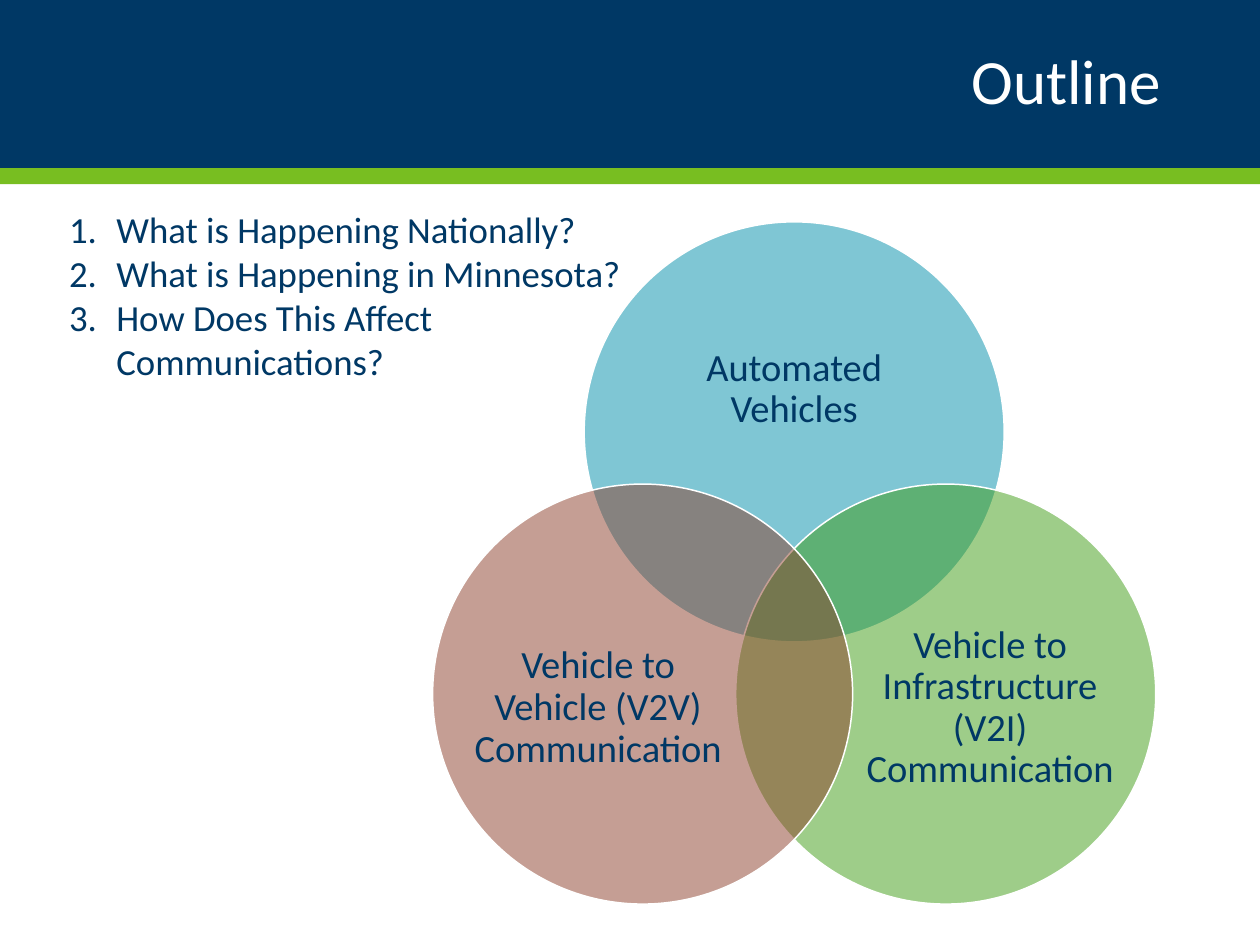
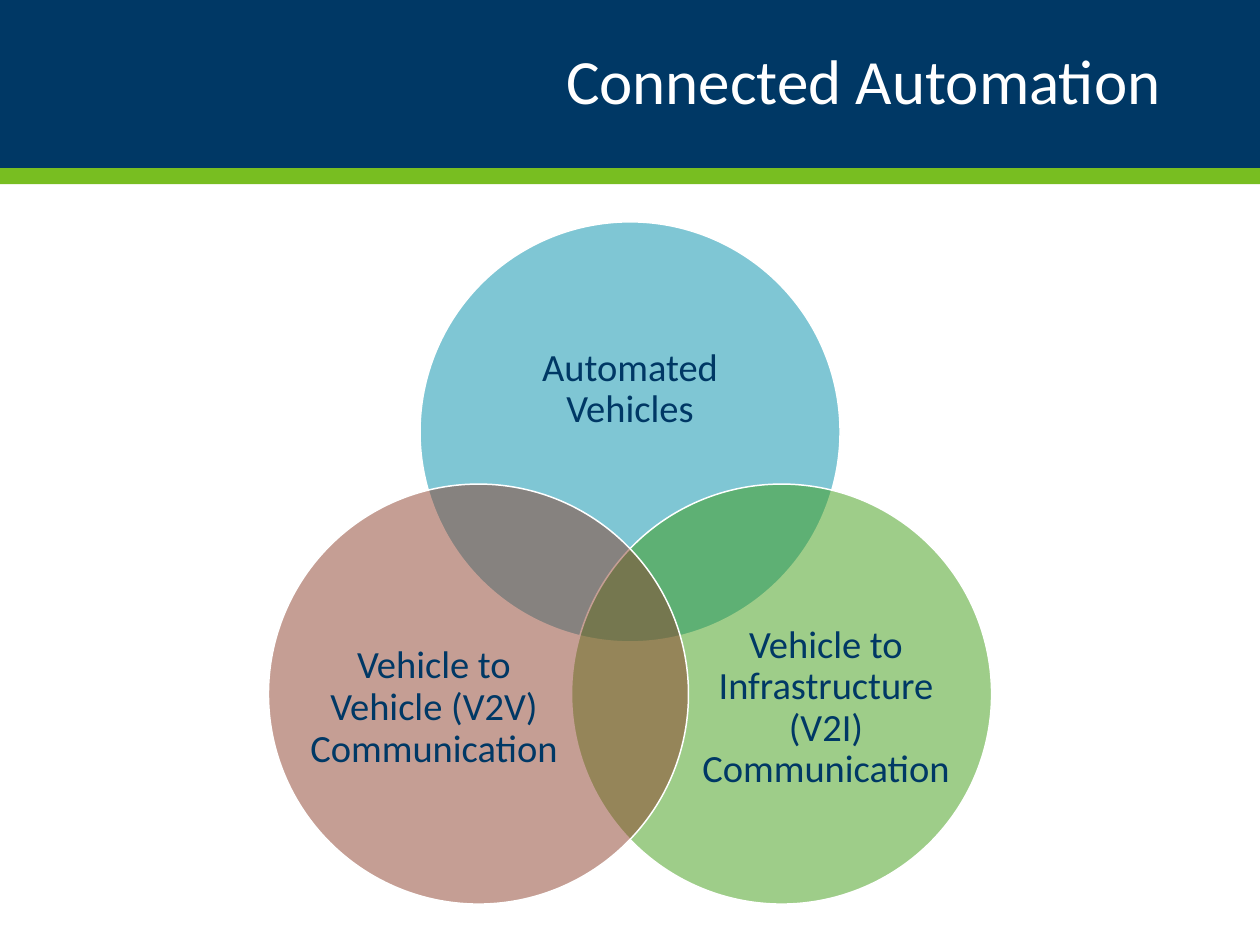
from pptx import Presentation
from pptx.dml.color import RGBColor
from pptx.enum.shapes import MSO_SHAPE
from pptx.enum.text import MSO_ANCHOR, MSO_AUTO_SIZE, PP_ALIGN
from pptx.oxml.ns import qn
from pptx.util import Pt
from lxml.etree import SubElement

NAVY = RGBColor(0x00, 0x38, 0x65)
LIME = RGBColor(0x78, 0xBE, 0x21)
WHITE = RGBColor(0xFF, 0xFF, 0xFF)
TEAL = RGBColor(0x00, 0x8E, 0xAA)
GREEN = RGBColor(0x3F, 0x9C, 0x15)
RUST = RGBColor(0x8D, 0x3F, 0x2B)

FONT = "Calibri"
PAGE_WIDTH, PAGE_HEIGHT = 720, 540
BAND_HEIGHT, STRIPE_HEIGHT = 96, 9.2
NO_INSETS = {f"margin_{side}": 0 for side in ("left", "top", "right", "bottom")}

# Venn geometry: circles and labels are placed from the diagram's centre line
DIAMETER = 240
TOP_ROW, BOTTOM_ROW = 126.8, 276.6
SIDE_SHIFT = 86.6
CIRCLES = [
    # colour, centre shift, top, label, (label shift, top, width, height)
    (TEAL, 0, TOP_ROW, "Automated Vehicles", (-88, 168.6, 176, 108)),
    (GREEN, SIDE_SHIFT, BOTTOM_ROW, "Vehicle to Infrastructure (V2I) Communication",
     (40, 338.6, 144, 132)),
    (RUST, -SIDE_SHIFT, BOTTOM_ROW, "Vehicle to Vehicle (V2V) Communication",
     (-184, 338.6, 144, 132)),
]
QUESTIONS = [
    "What is Happening Nationally?",
    "What is Happening in Minnesota?",
    "How Does This Affect Communications?",
]


def apply_format(target, values):
    for name, value in values.items():
        setattr(target, name, value)


def write_text(frame, lines, size, color, frame_format, para_format):
    apply_format(frame, {"word_wrap": True, **frame_format})
    for index, line in enumerate(lines):
        para = frame.add_paragraph() if index else frame.paragraphs[0]
        apply_format(para, para_format)
        span = para.add_run()
        span.text = line
        apply_format(span.font, {"name": FONT, "size": Pt(size)})
        span.font.color.rgb = color


def add_filled(shapes, kind, place, color):
    shape = shapes.add_shape(kind, *map(Pt, place))
    shape.shadow.inherit = False
    shape.fill.solid()
    shape.fill.fore_color.rgb = color
    shape.line.fill.background()
    return shape


def add_text_box(shapes, place, lines, size, frame_format, para_format):
    box = shapes.add_textbox(*map(Pt, place))
    write_text(box.text_frame, lines, size, NAVY, frame_format, para_format)
    return box


def add_page(deck, layout, title):
    page = deck.slides.add_slide(layout)
    heading = page.shapes.title
    apply_format(heading, {"left": Pt(49.5), "top": Pt(12),
                           "width": Pt(621), "height": Pt(72)})
    write_text(heading.text_frame, [title], 36, WHITE,
               {"vertical_anchor": MSO_ANCHOR.MIDDLE,
                "auto_size": MSO_AUTO_SIZE.NONE},
               {"alignment": PP_ALIGN.RIGHT, "line_spacing": 0.9})
    return page


def add_header_bands(page, layout):
    """Draw the bands, then move them to the layout so every page shares them."""
    bands = [(0, BAND_HEIGHT, NAVY), (BAND_HEIGHT, STRIPE_HEIGHT, LIME)]
    for top, height, color in bands:
        band = add_filled(page.shapes, MSO_SHAPE.RECTANGLE,
                          (0, top, PAGE_WIDTH, height), color)
        layout.shapes.element.insert(2, band.element)


def add_venn(page, center):
    venn = page.shapes.add_group_shape()
    for color, shift, top, label, (label_shift, *label_rest) in CIRCLES:
        left = center + shift - DIAMETER / 2
        circle = add_filled(venn.shapes, MSO_SHAPE.OVAL,
                            (left, top, DIAMETER, DIAMETER), color)
        circle.line.color.rgb = WHITE
        circle.line.width = Pt(0.85)
        # Half-transparent fill
        fill_color = circle.element.spPr.find(qn("a:solidFill"))[0]
        SubElement(fill_color, qn("a:alpha"), val="50000")
        add_text_box(venn.shapes, (center + label_shift, *label_rest), [label], 22,
                     {"vertical_anchor": MSO_ANCHOR.MIDDLE, **NO_INSETS},
                     {"alignment": PP_ALIGN.CENTER, "line_spacing": 0.9})


def add_numbered_list(page, place, lines):
    box = add_text_box(page.shapes, place, lines, 21,
                       {"auto_size": MSO_AUTO_SIZE.SHAPE_TO_FIT_TEXT}, {})
    indent = Pt(27)
    for para in box.text_frame.paragraphs:
        properties = para._p.get_or_add_pPr()
        properties.set("marL", str(indent))
        properties.set("indent", str(-indent))
        SubElement(properties, qn("a:buAutoNum"), type="arabicPeriod")


def main():
    deck = Presentation()
    deck.slide_width, deck.slide_height = Pt(PAGE_WIDTH), Pt(PAGE_HEIGHT)
    layout = deck.slide_layouts.get_by_name("Title Only")

    # Outline
    outline = add_page(deck, layout, "Outline")
    add_header_bands(outline, layout)
    add_venn(outline, 453.8)
    add_numbered_list(outline, (32.4, 114.5, 337, 108.7), QUESTIONS)

    # Connected automation
    automation = add_page(deck, layout, "Connected Automation")
    add_venn(automation, PAGE_WIDTH / 2)

    deck.save("out.pptx")


if __name__ == "__main__":
    main()
